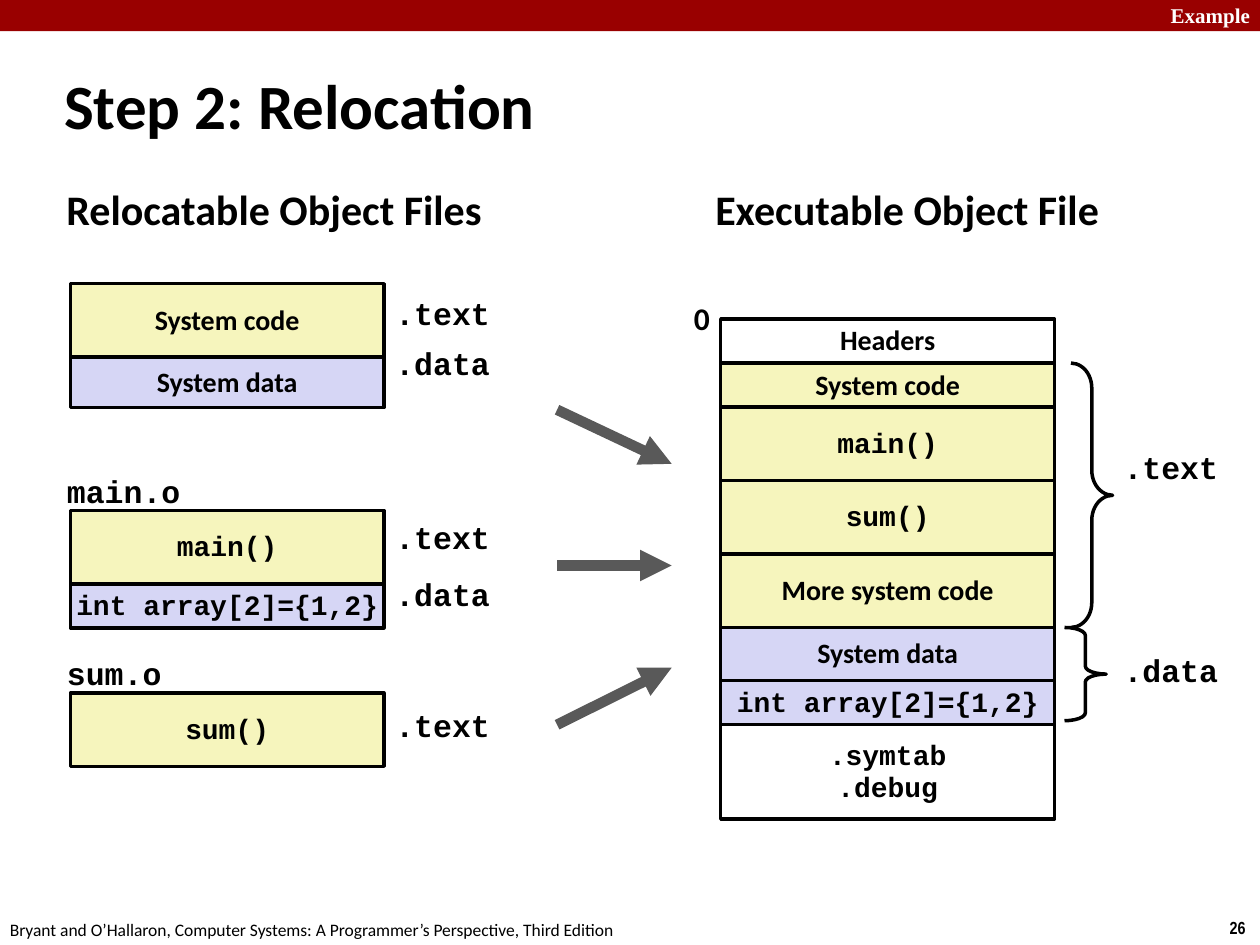
from dataclasses import dataclass

import pptx
import pptx.dml.color
import pptx.enum.shapes
import pptx.enum.text
import pptx.oxml.xmlchemy
import pptx.util

Cm = pptx.util.Cm
Pt = pptx.util.Pt
ALIGN = pptx.enum.text.PP_ALIGN
ANCHOR = pptx.enum.text.MSO_ANCHOR
SHAPE = pptx.enum.shapes.MSO_SHAPE


@dataclass(frozen=True)
class Theme:
    banner: str = "990000"
    ink: str = "000000"
    paper: str = "FFFFFF"
    code: str = "F6F5BD"
    data: str = "D6D6F5"
    arrow: str = "595959"
    sans: str = "Calibri"
    mono: str = "Courier New"
    serif: str = "Times New Roman"
    narrow: str = "Arial Narrow"
    title: int = 36
    heading: int = 24
    label: int = 18
    section: int = 16
    banner_size: int = 12
    footer: int = 10
    outline: int = 2
    arrow_width: int = 6


THEME = Theme()
# Section: text, font, fill, height in cm
SYSTEM_CODE = ("System code", THEME.sans, THEME.code, 1.48)
SYSTEM_DATA = ("System data", THEME.sans, THEME.data, 1.02)
MAIN = ("main()", THEME.mono, THEME.code, 1.48)
SUM = ("sum()", THEME.mono, THEME.code, 1.48)
ARRAY = ("int array[2]={1,2}", THEME.mono, THEME.data, 0.89)

# Object file: name, top, sections, (label, offset from the file's top)
OBJECT_FILES = [
    ("", 5.72, [SYSTEM_CODE, SYSTEM_DATA], [(".text", 0.15), (".data", 1.16)]),
    ("main.o", 10.29, [MAIN, ARRAY], [(".text", 0.1), (".data", 1.24)]),
    ("sum.o", 13.97, [SUM], [(".text", 0.2)]),
]
EXECUTABLE = [
    ("Headers", THEME.sans, THEME.paper, 0.89),
    (*SYSTEM_CODE[:3], 0.89),
    MAIN,
    SUM,
    ("More system code", THEME.sans, THEME.code, 1.48),
    (*SYSTEM_DATA[:3], 1.07),
    ARRAY,
    (".symtab\n.debug", THEME.mono, THEME.paper, 1.9),
]


def rgb(value):
    return pptx.dml.color.RGBColor.from_string(value)


def write(frame, text, font, size, color=THEME.ink, bold=True, align=ALIGN.LEFT,
          anchor=ANCHOR.TOP, spacing=None):
    frame.word_wrap = False
    frame.vertical_anchor = anchor
    for number, line in enumerate(text.split("\n")):
        paragraph = frame.add_paragraph() if number else frame.paragraphs[0]
        paragraph.alignment = align
        if spacing:
            paragraph.line_spacing = spacing
        run = paragraph.add_run()
        run.text = line
        run.font.name = font
        run.font.size = Pt(size)
        run.font.bold = bold
        run.font.color.rgb = rgb(color)


def add_text(slide, left, top, width, height, text, font, size, **style):
    box = slide.shapes.add_textbox(Cm(left), Cm(top), Cm(width), Cm(height))
    write(box.text_frame, text, font, size, **style)


def add_label(slide, left, top, width, text, font=THEME.mono):
    spacing = 0.94 if font == THEME.mono else 0.98
    add_text(slide, left, top, width, 0.99, text, font, THEME.label, spacing=spacing)


def add_heading(slide, left, width, text):
    add_text(slide, left, 3.63, width, 1.27, text, THEME.sans, THEME.heading,
             spacing=0.98)


def add_outlined(slide, kind, left, top, width, height):
    shape = slide.shapes.add_shape(kind, Cm(left), Cm(top), Cm(width), Cm(height))
    shape.shadow.inherit = False
    shape.line.color.rgb = rgb(THEME.ink)
    shape.line.width = Pt(THEME.outline)
    return shape


def add_sections(slide, left, top, width, sections):
    """Stack the sections downwards from top."""
    for text, font, fill, height in sections:
        section = add_outlined(slide, SHAPE.RECTANGLE, left, top, width, height)
        section.fill.solid()
        section.fill.fore_color.rgb = rgb(fill)
        write(section.text_frame, text, font, THEME.section, align=ALIGN.CENTER,
              anchor=ANCHOR.MIDDLE, spacing=0.94 if font == THEME.mono else 0.98)
        top += height


def add_object_file(slide, left, top, width, name, sections, labels):
    add_sections(slide, left, top, width, sections)
    if name:
        add_label(slide, left - 0.32, top - 0.84, 0.51 + 0.38 * len(name), name)
    for text, offset in labels:
        add_label(slide, left + width - 0.02, top + offset, 2.41, text)


def add_brace(slide, left, top, height, curl):
    brace = add_outlined(slide, SHAPE.RIGHT_BRACE, left, top, 0.84, height)
    brace.fill.background()
    brace.adjustments[0] = curl
    brace.adjustments[1] = 0.5


def add_executable(slide, left, top, width):
    right = left + width
    add_heading(slide, left - 0.36, 8.33, "Executable Object File")
    add_label(slide, left - 0.79, top - 0.48, 0.86, "0", THEME.sans)
    add_sections(slide, left, top, width, EXECUTABLE)

    heights = [section[3] for section in EXECUTABLE]
    text_top, data_top = top + heights[0], top + sum(heights[:5])
    add_brace(slide, right + 0.33, text_top, data_top - text_top, 0.6)
    add_brace(slide, right + 0.2, data_top, sum(heights[5:7]) - 0.08, 0.19)
    for text, offset in ((".text", 2.54), (".data", 6.63)):
        add_label(slide, right + 1.14, top + offset, 2.41, text)


def add_arrows(slide, left, right):
    new_element = pptx.oxml.xmlchemy.OxmlElement
    for start, end in ((8.26, 9.35), (11.4, 11.4), (14.61, 13.46)):
        arrow = slide.shapes.add_connector(
            pptx.enum.shapes.MSO_CONNECTOR.STRAIGHT,
            Cm(left), Cm(start), Cm(right), Cm(end))
        arrow.line.color.rgb = rgb(THEME.arrow)
        arrow.line.width = Pt(THEME.arrow_width)
        properties = arrow.element.spPr
        head = new_element("a:tailEnd")
        head.set("type", "triangle")
        properties.find(pptx.oxml.ns.qn("a:ln")).append(head)
        properties.append(new_element("a:effectLst"))


def add_frame(slide, width, height):
    """Banner, footer and page number around the slide's content."""
    banner = slide.shapes.add_shape(SHAPE.RECTANGLE, 0, 0, Cm(width), Cm(0.63))
    banner.shadow.inherit = False
    banner.fill.solid()
    banner.fill.fore_color.rgb = rgb(THEME.banner)
    banner.line.fill.background()
    add_text(slide, width - 3.45, -0.08, 3.5, 0.76, "Example College", THEME.serif,
             THEME.banner_size, color=THEME.paper, align=ALIGN.RIGHT)
    add_text(slide, width - 0.86, height - 0.69, 0.86, 0.69, "26", THEME.narrow,
             THEME.footer)
    add_text(slide, -0.05, height - 0.64, 12.9, 0.69,
             "Bryant and O’Hallaron, Computer Systems: A Programmer’s Perspective, "
             "Third Edition", THEME.sans, THEME.footer, bold=False)


def set_title(slide, left, top, width, height, text):
    title = slide.shapes.title
    title.left, title.top, title.width, title.height = map(
        Cm, (left, top, width, height))
    write(title.text_frame, text, THEME.sans, THEME.title, anchor=ANCHOR.MIDDLE)
    title.text_frame.word_wrap = True
    title.text_frame.auto_size = pptx.enum.text.MSO_AUTO_SIZE.NONE


def main():
    width, height = 25.4, 19.05
    presentation = pptx.Presentation()
    presentation.slide_width, presentation.slide_height = Cm(width), Cm(height)
    slide = presentation.slides.add_slide(presentation.slide_layouts[5])

    add_frame(slide, width, height)
    set_title(slide, 1.04, 1.3, 21.11, 1.6, "Step 2: Relocation")
    add_heading(slide, 1.09, 8.97, "Relocatable Object Files")
    for name, top, sections, labels in OBJECT_FILES:
        add_object_file(slide, 1.42, top, 6.32, name, sections, labels)
    add_executable(slide, 14.53, 6.43, 6.73)
    add_arrows(slide, 11.23, 13.54)
    presentation.save("out.pptx")


if __name__ == "__main__":
    main()
